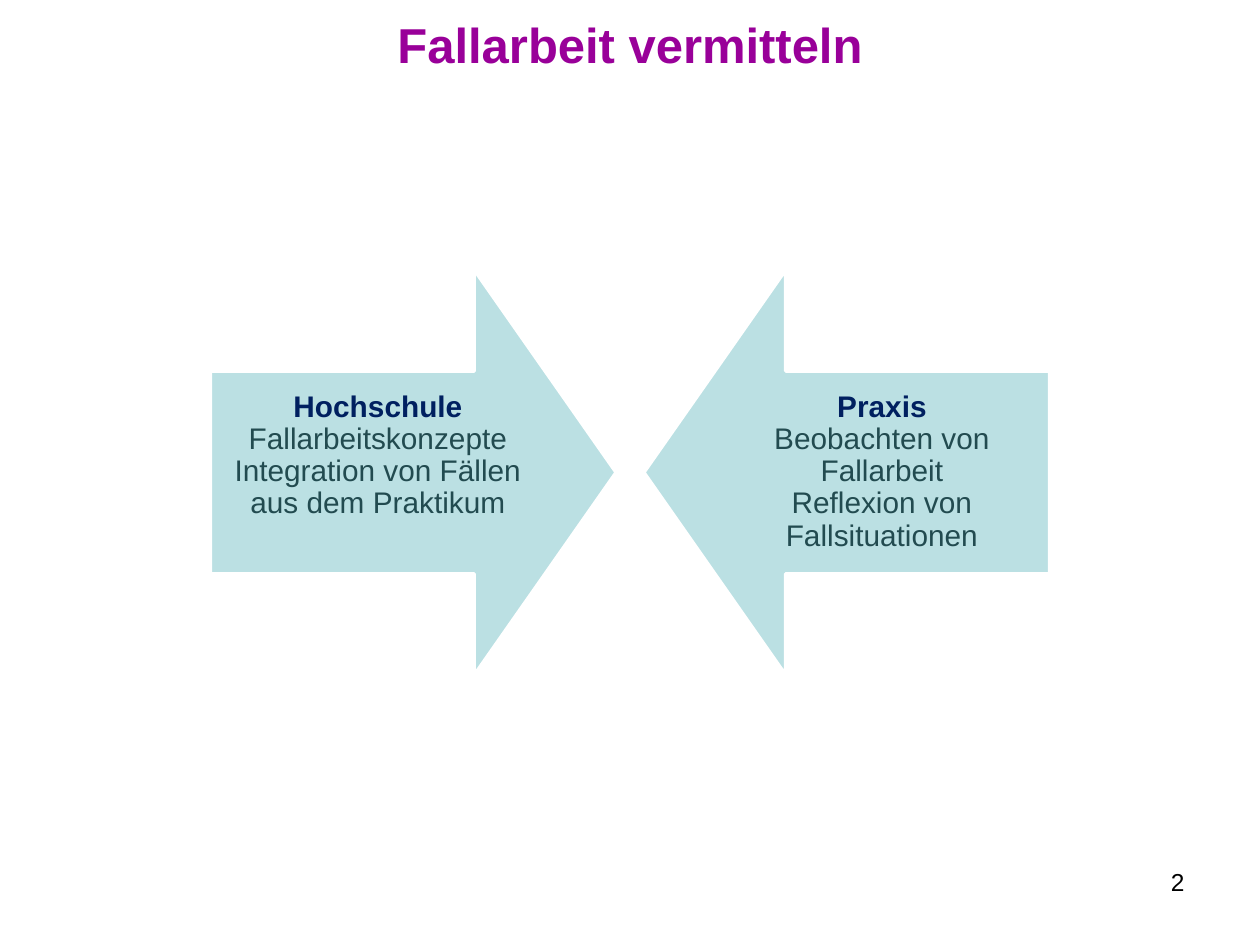
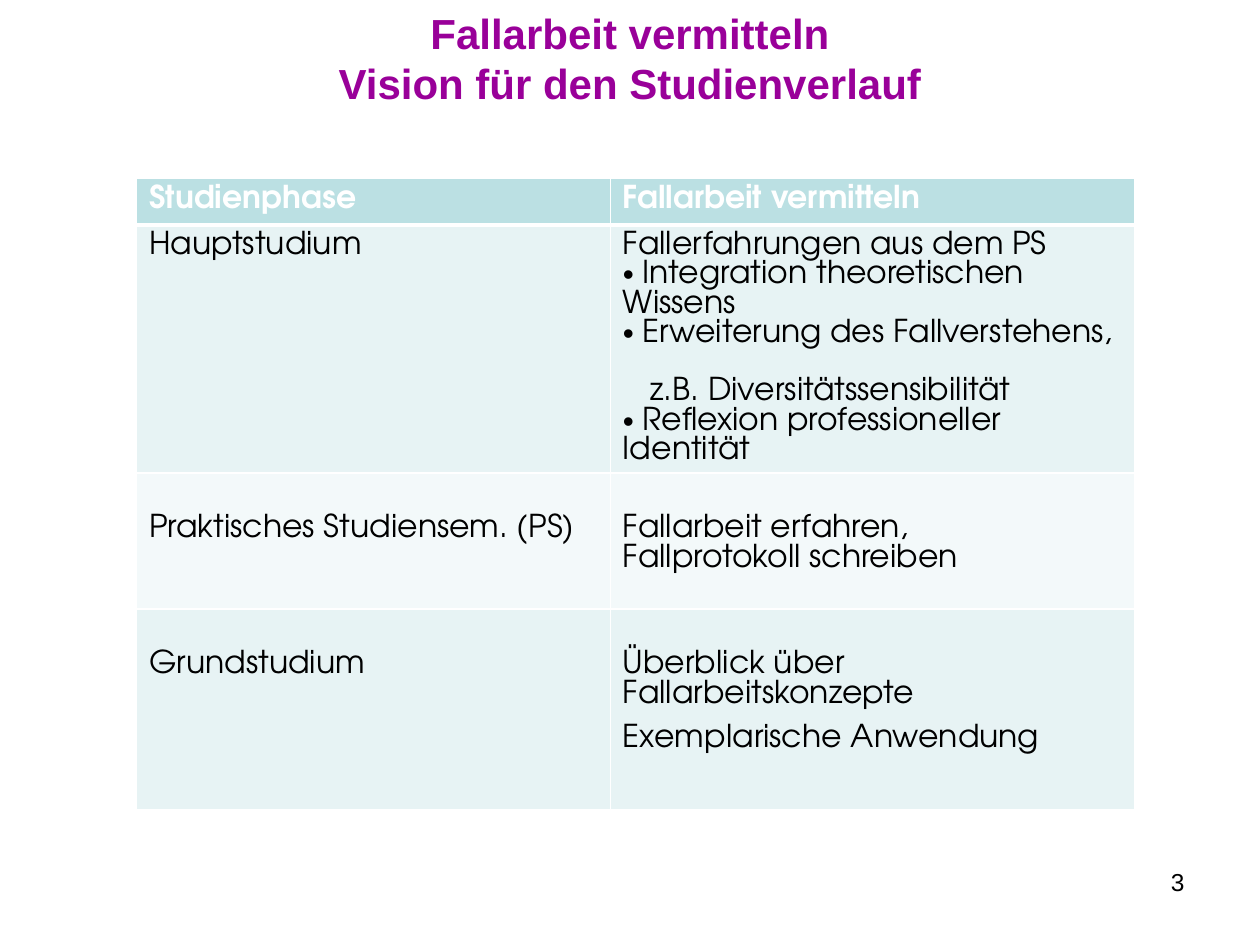
from dataclasses import dataclass

from lxml.etree import SubElement
from pptx import Presentation
from pptx.dml.color import RGBColor
from pptx.enum.shapes import MSO_SHAPE
from pptx.enum.text import MSO_ANCHOR, PP_ALIGN
from pptx.oxml import parse_xml
from pptx.oxml.ns import nsdecls, qn
from pptx.slide import Slide
from pptx.table import _Cell
from pptx.text.text import TextFrame, _Paragraph
from pptx.util import Emu, Inches, Pt

SLIDE_WIDTH, SLIDE_HEIGHT = Inches(10), Inches(7.5)

PURPLE = RGBColor(0x99, 0x00, 0x99)
NAVY = RGBColor(0x00, 0x20, 0x60)
DARK_TEAL = RGBColor(0x22, 0x4B, 0x50)
TEAL = RGBColor(0xBB, 0xE0, 0xE3)
LIGHT_TEAL = RGBColor(0xE7, 0xF3, 0xF4)
PALE_TEAL = RGBColor(0xF3, 0xF9, 0xFA)
BLACK = RGBColor(0x00, 0x00, 0x00)
WHITE = RGBColor(0xFF, 0xFF, 0xFF)


@dataclass(frozen=True)
class Area:
    """A rectangle in percent of the slide's width and height."""
    left: float
    top: float
    width: float
    height: float

    def lengths(self) -> tuple[Emu, Emu, Emu, Emu]:
        return (across(self.left), down(self.top),
                across(self.width), down(self.height))

    def mirrored(self) -> "Area":
        return Area(100 - self.left - self.width, self.top, self.width, self.height)


@dataclass(frozen=True)
class Style:
    size: float
    color: RGBColor
    bold: bool = False
    font: str = "Arial"


@dataclass(frozen=True)
class Partner:
    """One of the two places of learning, drawn as an arrow to the middle."""
    name: str
    tasks: tuple[str, ...]
    arrow: MSO_SHAPE
    arrow_area: Area
    text_area: Area


@dataclass(frozen=True)
class Line:
    """A paragraph in a table cell; indent in inches, gaps in line pitches."""
    text: str
    bullet: bool = False
    indent: float = 0
    lines_before: float = 0
    spacing: float = 1


@dataclass(frozen=True)
class Phase:
    """A table row; height is in percent of the slide."""
    cells: tuple[tuple[Line, ...], ...]
    height: float
    fill: RGBColor
    style: Style
    top_margin: float = 0.05
    bottom_border: float = 1


PAGE_NUMBER_AREA = Area(71.7, 91.1, 23.3, 6.9)
PAGE_NUMBER = Style(14, BLACK)
PARTNER_NAME = Style(17, NAVY, True)
PARTNER_TASK = Style(17, DARK_TEAL)
TABLE_HEAD = Style(18, WHITE, True, "TeX Gyre Adventor")
TABLE_BODY = Style(18, BLACK, False, "TeX Gyre Adventor")
TABLE_LINE_PITCH = 16.75

ARROW_AREA = Area(16.7, 28.55, 32.2, 42.9)
ARROW_TEXT_AREA = Area(16.7, 39.2, 26.6, 21.5)
PARTNERS = (
    Partner("Hochschule",
            ("Fallarbeitskonzepte", "Integration von Fällen aus dem Praktikum"),
            MSO_SHAPE.RIGHT_ARROW, ARROW_AREA, ARROW_TEXT_AREA),
    Partner("Praxis",
            ("Beobachten von Fallarbeit", "Reflexion von Fallsituationen"),
            MSO_SHAPE.LEFT_ARROW, ARROW_AREA.mirrored(), ARROW_TEXT_AREA.mirrored()),
)

TABLE_LEFT, TABLE_TOP = 10.84, 18.9
COLUMN_WIDTHS = (37.6, 41.6)
LOWERED = 0.33
PHASES = (
    Phase(((Line("Studienphase"),), (Line("Fallarbeit vermitteln"),)),
          4.9, TEAL, TABLE_HEAD, bottom_border=3),
    Phase(((Line("Hauptstudium"),),
           (Line("Fallerfahrungen aus dem PS"),
            Line(" Integration theoretischen Wissens", bullet=True),
            Line(" Erweiterung des Fallverstehens,", bullet=True),
            Line("z.B. Diversitätssensibilität", indent=0.22, lines_before=1),
            Line(" Reflexion professioneller Identität", bullet=True))),
          26.25, LIGHT_TEAL, TABLE_BODY),
    Phase(((Line("Praktisches Studiensem. (PS)"),),
           (Line("Fallarbeit erfahren,"), Line("Fallprotokoll schreiben"))),
          14.4, PALE_TEAL, TABLE_BODY, LOWERED),
    Phase(((Line("Grundstudium"),),
           (Line("Überblick über Fallarbeitskonzepte"),
            Line("Exemplarische Anwendung", spacing=1.5))),
          21.3, LIGHT_TEAL, TABLE_BODY, LOWERED),
)


def across(percent: float) -> Emu:
    return Emu(round(SLIDE_WIDTH * percent / 100))


def down(percent: float) -> Emu:
    return Emu(round(SLIDE_HEIGHT * percent / 100))


def add_run(paragraph: _Paragraph, text: str, style: Style) -> None:
    run = paragraph.add_run()
    run.text = text
    run.font.name = style.font
    run.font.size = Pt(style.size)
    run.font.bold = style.bold
    run.font.color.rgb = style.color


def add_text_frame(slide: Slide, area: Area, anchor: MSO_ANCHOR) -> TextFrame:
    frame = slide.shapes.add_textbox(*area.lengths()).text_frame
    frame.word_wrap = True
    frame.vertical_anchor = anchor
    return frame


def add_lines(paragraph: _Paragraph, lines: tuple[tuple[str, Style], ...]) -> None:
    """Add the lines to one paragraph, with line breaks between them."""
    for index, (text, style) in enumerate(lines):
        if index:
            paragraph.add_line_break()
        add_run(paragraph, text, style)


def add_titled_slide(presentation: Presentation, title: tuple[str, ...], size: float,
                     title_height: float, page: int) -> Slide:
    slide = presentation.slides.add_slide(presentation.slide_layouts[6])
    heading = add_text_frame(slide, Area(5, 0, 90, title_height), MSO_ANCHOR.MIDDLE)
    heading.paragraphs[0].alignment = PP_ALIGN.CENTER
    style = Style(size, PURPLE, True)
    add_lines(heading.paragraphs[0], tuple((line, style) for line in title))
    number = add_text_frame(slide, PAGE_NUMBER_AREA, MSO_ANCHOR.TOP).paragraphs[0]
    number.alignment = PP_ALIGN.RIGHT
    add_run(number, str(page), PAGE_NUMBER)
    return slide


def add_partner(slide: Slide, partner: Partner) -> None:
    arrow = slide.shapes.add_shape(partner.arrow, *partner.arrow_area.lengths())
    arrow.adjustments[0], arrow.adjustments[1] = 0.5, 0.35
    arrow.shadow.inherit = False
    arrow.fill.solid()
    arrow.fill.fore_color.rgb = TEAL
    arrow.line.color.rgb = WHITE
    arrow.line.width = Pt(2)

    frame = add_text_frame(slide, partner.text_area, MSO_ANCHOR.TOP)
    frame.margin_left = frame.margin_right = Inches(0.13)
    frame.margin_top = Inches(0.17)
    paragraph = frame.paragraphs[0]
    paragraph.alignment = PP_ALIGN.CENTER
    paragraph.line_spacing = 0.9
    tasks = tuple((task, PARTNER_TASK) for task in partner.tasks)
    add_lines(paragraph, ((partner.name, PARTNER_NAME), *tasks))


def set_borders(cell: _Cell, top: float, bottom: float) -> None:
    properties = cell._tc.get_or_add_tcPr()
    widths = {"lnL": 1, "lnR": 1, "lnT": top, "lnB": bottom}
    for index, (side, width) in enumerate(widths.items()):
        properties.insert(index, parse_xml(
            f'<a:{side} {nsdecls("a")} w="{Pt(width)}"><a:solidFill>'
            f'<a:srgbClr val="{WHITE}"/></a:solidFill></a:{side}>'))


def fill_cell(cell: _Cell, lines: tuple[Line, ...], phase: Phase) -> None:
    cell.fill.solid()
    cell.fill.fore_color.rgb = phase.fill
    cell.margin_top = Inches(phase.top_margin)
    for index, line in enumerate(lines):
        frame = cell.text_frame
        paragraph = frame.add_paragraph() if index else frame.paragraphs[0]
        paragraph.space_before = Pt(line.lines_before * TABLE_LINE_PITCH)
        paragraph.line_spacing = Pt(line.spacing * TABLE_LINE_PITCH)
        properties = paragraph._p.get_or_add_pPr()
        properties.set("marL", str(Inches(line.indent)))
        properties.set("indent", "0")
        if line.bullet:
            SubElement(properties, qn("a:buFont")).set("typeface", "Arial")
            SubElement(properties, qn("a:buChar")).set("char", "•")
        add_run(paragraph, line.text, phase.style)


def add_phase_table(slide: Slide) -> None:
    area = Area(TABLE_LEFT, TABLE_TOP, sum(COLUMN_WIDTHS),
                sum(phase.height for phase in PHASES))
    table = slide.shapes.add_table(
        len(PHASES), len(COLUMN_WIDTHS), *area.lengths()).table
    table.first_row = table.horz_banding = False
    for column, width in zip(table.columns, COLUMN_WIDTHS):
        column.width = across(width)
    border_above = 1
    for row, phase in zip(table.rows, PHASES):
        row.height = down(phase.height)
        for cell, lines in zip(row.cells, phase.cells):
            fill_cell(cell, lines, phase)
            set_borders(cell, border_above, phase.bottom_border)
        border_above = phase.bottom_border


def main() -> None:
    presentation = Presentation()
    presentation.slide_width, presentation.slide_height = SLIDE_WIDTH, SLIDE_HEIGHT

    partners_slide = add_titled_slide(
        presentation, ("Fallarbeit vermitteln",), 28, 9.3, page=2)
    for partner in PARTNERS:
        add_partner(partners_slide, partner)

    phases_slide = add_titled_slide(
        presentation, ("Fallarbeit vermitteln", "Vision für den Studienverlauf"),
        24, 12.25, page=3)
    add_phase_table(phases_slide)

    presentation.save("out.pptx")


if __name__ == "__main__":
    main()
